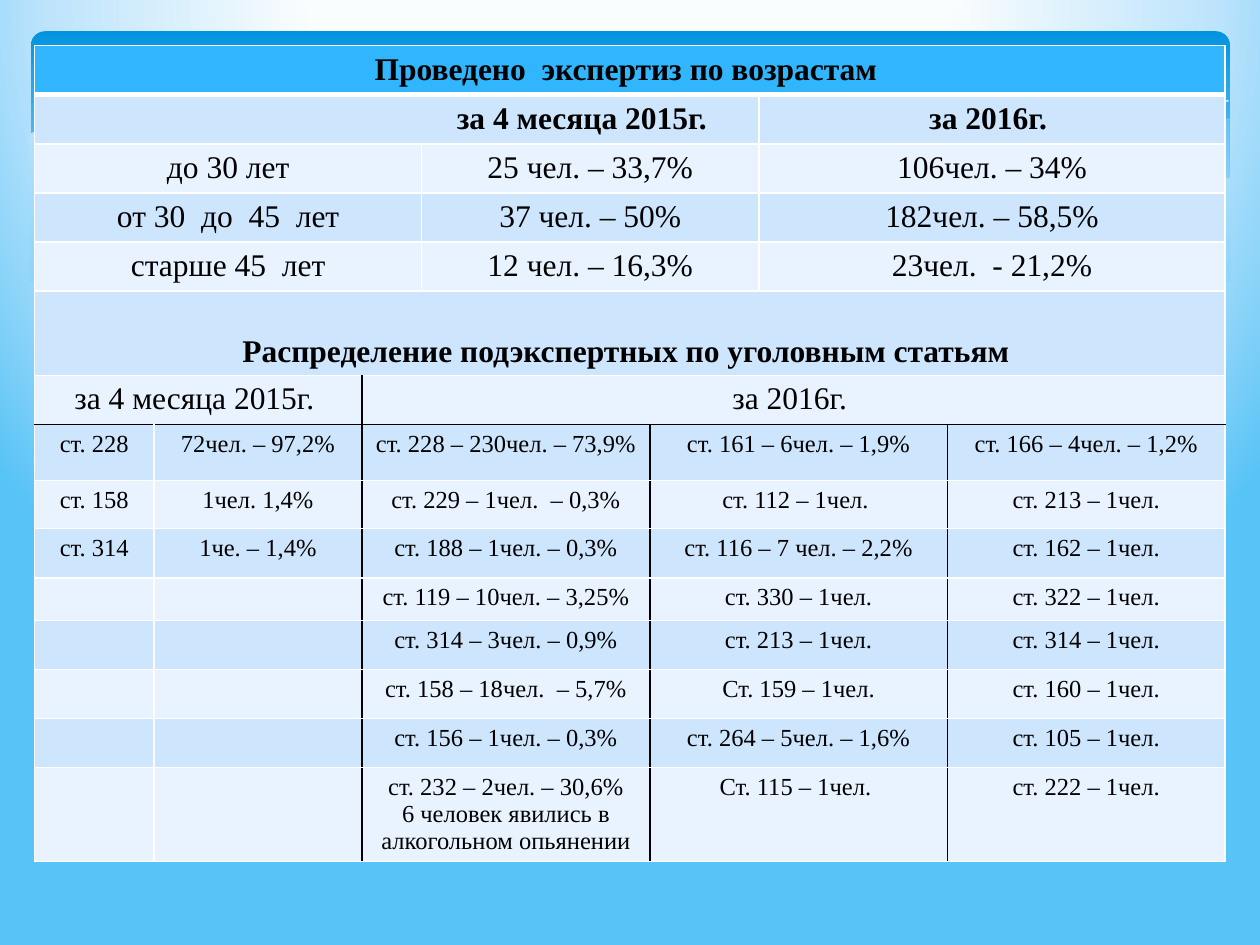
"""Builds the slide on examinations by age and by criminal article."""
from lxml import etree
from pptx import Presentation, util as u
from pptx.dml.color import RGBColor
from pptx.enum import shapes, text
from pptx.oxml.ns import qn

COLORS = {"ink": "000000", "white": "FFFFFF", "header": "31B6FD", "band": "CEE5FE",
          "pale": "E8F3FF", "mist": "C6E7FC", "glow": "FAFDFE", "haze": "BEE4FC",
          "sky": "58C3F6", "shore": "8FD4F9", "bar_top": "0293E0", "bar_end": "83D3FE"}
FONT = "Times New Roman"
SKY = [(40, "glow"), (74, "haze"), (100, "sky")]
SHORE = [(0, "haze"), (100, "shore")]
BAR = [(0, "bar_top"), (90, "bar_end")]

COLUMNS = [2.4, 4.2, 1.2, 4.6, 2.2, 3.8, 5.6]
ROW = 0.99
ROW_HEIGHTS = {5: 1.7, 7: 1.13, 8: 0.97, 10: 0.83}
WHOLE, PERIODS, AGES, YEARS, ARTICLES = (7,), (5, 2), (3, 2, 2), (2, 5), (1, 1, 2, 2, 1)
TITLE, PERIOD_ROW, SUBTITLE, YEAR_ROW = 0, 1, 5, 6
ROWS = [
    (WHOLE, ["Проведено  экспертиз по возрастам "]),
    (PERIODS, ["за 4 месяца 2015г. ", "за 2016г. "]),
    (AGES, ["до 30 лет", "25 чел. – 33,7%", "106чел. – 34%"]),
    (AGES, ["от 30  до  45  лет", "37 чел. – 50%", "182чел. – 58,5%"]),
    (AGES, ["старше 45  лет", "12 чел. – 16,3%", "23чел.  - 21,2%"]),
    (WHOLE, ["Распределение подэкспертных по уголовным статьям "]),
    (YEARS, ["за 4 месяца 2015г. ", "за 2016г. "]),
    (ARTICLES, ["ст. 228", "72чел. – 97,2%", "ст. 228 – 230чел. – 73,9%",
                "ст. 161 – 6чел. – 1,9%", "ст. 166 – 4чел. – 1,2%"]),
    (ARTICLES, ["ст. 158", "1чел. 1,4%", "ст. 229 – 1чел.  – 0,3%",
                "ст. 112 – 1чел. ", "ст. 213 – 1чел."]),
    (ARTICLES, ["ст. 314", "1че. – 1,4%", "ст. 188 – 1чел. – 0,3%",
                "ст. 116 – 7 чел. – 2,2%", "ст. 162 – 1чел."]),
    (ARTICLES, ["", "", "ст. 119 – 10чел. – 3,25%", "ст. 330 – 1чел.", "ст. 322 – 1чел."]),
    (ARTICLES, ["", "", "ст. 314 – 3чел. – 0,9%", "ст. 213 – 1чел.", "ст. 314 – 1чел."]),
    (ARTICLES, ["", "", "ст. 158 – 18чел.  – 5,7%", "Ст. 159 – 1чел.", "ст. 160 – 1чел."]),
    (ARTICLES, ["", "", "ст. 156 – 1чел. – 0,3%", "ст. 264 – 5чел. – 1,6%", "ст. 105 – 1чел."]),
    (ARTICLES, ["", "", "ст. 232 – 2чел. – 30,6%\n6 человек явились в алкогольном опьянении",
                "Ст. 115 – 1чел. ", "ст. 222 – 1чел."]),
]
RULE_WIDTHS = {1: 3, 14: 0.25}

WAVE_SCALE = u.Cm(2.54) / 100
MISTS = [
    (29, [(975, 94), (935, 101), (891, 110), (832, 125), (779, 137), (729, 147), (661, 160),
          (705, 165), (757, 170), (814, 172), (863, 170), (905, 163), (942, 154), (976, 141),
          (976, 94)]),
    (40, [(893, 167), (837, 159), (775, 149), (706, 134), (629, 116), (569, 102), (514, 92),
          (465, 86), (399, 80), (344, 80), (286, 86), (342, 94), (404, 106), (491, 126),
          (566, 143), (634, 156), (695, 165), (748, 170), (807, 173), (857, 171)]),
]
CREST_LINES = [
    [(309, 90), (344, 84), (401, 82), (450, 82), (510, 86), (582, 94), (665, 108),
     (760, 128), (831, 145), (907, 166)],
    [(613, 151), (672, 135), (748, 117), (806, 104), (866, 93), (910, 86), (951, 82), (975, 80)],
]
FRONT_WAVE = [(977, 141), (940, 154), (899, 164), (850, 170), (793, 171), (726, 167),
              (648, 156), (555, 139), (447, 114), (365, 96), (292, 85), (230, 79), (177, 78),
              (132, 81), (95, 85), (67, 91), (46, 98), (29, 104), (23, 107), (23, 224),
              (977, 224)]


def rgb(name):
    return RGBColor.from_string(COLORS[name])


def add_color(parent, name):
    return etree.SubElement(parent, qn("a:srgbClr"), val=COLORS[name])


def set_gradient(owner, fill, stops, radial=False):
    fill.gradient()
    gradient = next(owner.iter(qn("a:gradFill")))
    for part in list(gradient):
        gradient.remove(part)
    stop_list = etree.SubElement(gradient, qn("a:gsLst"))
    for position, name in stops:
        add_color(etree.SubElement(stop_list, qn("a:gs"), pos=str(position * 1000)), name)
    if radial:
        circle = etree.SubElement(gradient, qn("a:path"), path="circle")
        etree.SubElement(circle, qn("a:fillToRect"), l="20000", t="-40000", r="20000", b="140000")
    else:
        etree.SubElement(gradient, qn("a:lin"), ang="5400000", scaled="0")


def add_wave(slide, points, close=True):
    builder = slide.shapes.build_freeform(*points[0], scale=WAVE_SCALE)
    builder.add_line_segments(points[1:], close=close)
    wave = builder.convert_to_shape()
    wave.shadow.inherit = False
    if close:
        wave.line.fill.background()
    else:
        wave.fill.background()
        wave.line.color.rgb = rgb("white")
        wave.line.width = 0
    return wave


def add_backdrop(slide):
    set_gradient(slide.element, slide.background.fill, SKY, radial=True)
    bar = slide.shapes.add_shape(shapes.MSO_SHAPE.ROUNDED_RECTANGLE,
                                 u.Cm(0.63), u.Cm(0.63), u.Cm(24.16), u.Cm(3.96))
    bar.adjustments[0] = 0.07
    bar.shadow.inherit = False
    bar.line.fill.background()
    set_gradient(bar.element, bar.fill, BAR)
    for opacity, points in MISTS:
        mist = add_wave(slide, points)
        mist.fill.solid()
        mist.fill.fore_color.rgb = rgb("mist")
        tint = next(mist.element.iter(qn("a:srgbClr")))
        etree.SubElement(tint, qn("a:alpha"), val=str(opacity * 1000))
    for points in CREST_LINES:
        add_wave(slide, points, close=False)
    front = add_wave(slide, FRONT_WAVE)
    set_gradient(front.element, front.fill, SHORE)


def set_borders(cell, row, first, last):
    def upright(edge):
        return "ink" if edge == 2 and row >= YEAR_ROW or edge in (4, 6) and row > YEAR_ROW else "white"

    def level(edge):
        return "ink" if edge == YEAR_ROW + 1 else "white"

    props = cell._tc.get_or_add_tcPr()
    sides = [("a:lnL", upright(first), 1), ("a:lnR", upright(last), 1),
             ("a:lnT", level(row), RULE_WIDTHS.get(row, 1)),
             ("a:lnB", level(row + 1), RULE_WIDTHS.get(row + 1, 1))]
    for place, (tag, name, width) in enumerate(sides):
        border = etree.Element(qn(tag), w=str(u.Pt(width)))
        add_color(etree.SubElement(border, qn("a:solidFill")), name)
        props.insert(place, border)


def write(cell, wording, size, bold):
    for number, line in enumerate(wording.split("\n")):
        frame = cell.text_frame
        paragraph = frame.add_paragraph() if number else frame.paragraphs[0]
        paragraph.alignment = text.PP_ALIGN.CENTER
        if not line:
            etree.SubElement(paragraph._p, qn("a:endParaRPr"), sz=str(size * 100))
            continue
        run = paragraph.add_run()
        run.text = line
        run.font.name, run.font.size, run.font.bold = FONT, u.Pt(size), bold
        run.font.color.rgb = rgb("ink")


def add_statistics(slide):
    heights = [ROW_HEIGHTS.get(row, ROW) for row in range(len(ROWS))]
    table = slide.shapes.add_table(len(ROWS), len(COLUMNS), u.Cm(0.7), u.Cm(0.92),
                                   u.Cm(sum(COLUMNS)), u.Cm(sum(heights))).table
    for column, width in zip(table.columns, COLUMNS):
        column.width = u.Cm(width)
    for row, (spans, wordings) in enumerate(ROWS):
        table.rows[row].height = u.Cm(heights[row])
        shade = "header" if row == TITLE else "band" if row % 2 else "pale"
        first = 0
        for span, wording in zip(spans, wordings):
            last = first + span
            for column in range(first, last):
                part = table.cell(row, column)
                part.fill.solid()
                part.fill.fore_color.rgb = rgb(shade)
                set_borders(part, row, first, last)
            cell = table.cell(row, first)
            if span > 1:
                cell.merge(table.cell(row, last - 1))
            write(cell, wording, 14 if spans == ARTICLES else 18,
                  row in (TITLE, PERIOD_ROW, SUBTITLE))
            first = last
    first_period = table.cell(PERIOD_ROW, 0).text_frame.paragraphs[0]
    first_period._p.get_or_add_pPr().set("marL", str(u.Cm(7.62)))
    table.cell(SUBTITLE, 0).vertical_anchor = text.MSO_ANCHOR.BOTTOM


def main():
    deck = Presentation()
    deck.slide_width, deck.slide_height = u.Cm(25.4), u.Cm(19.05)
    slide = deck.slides.add_slide(deck.slide_layouts[6])
    add_backdrop(slide)
    add_statistics(slide)
    deck.save("out.pptx")


if __name__ == "__main__":
    main()
